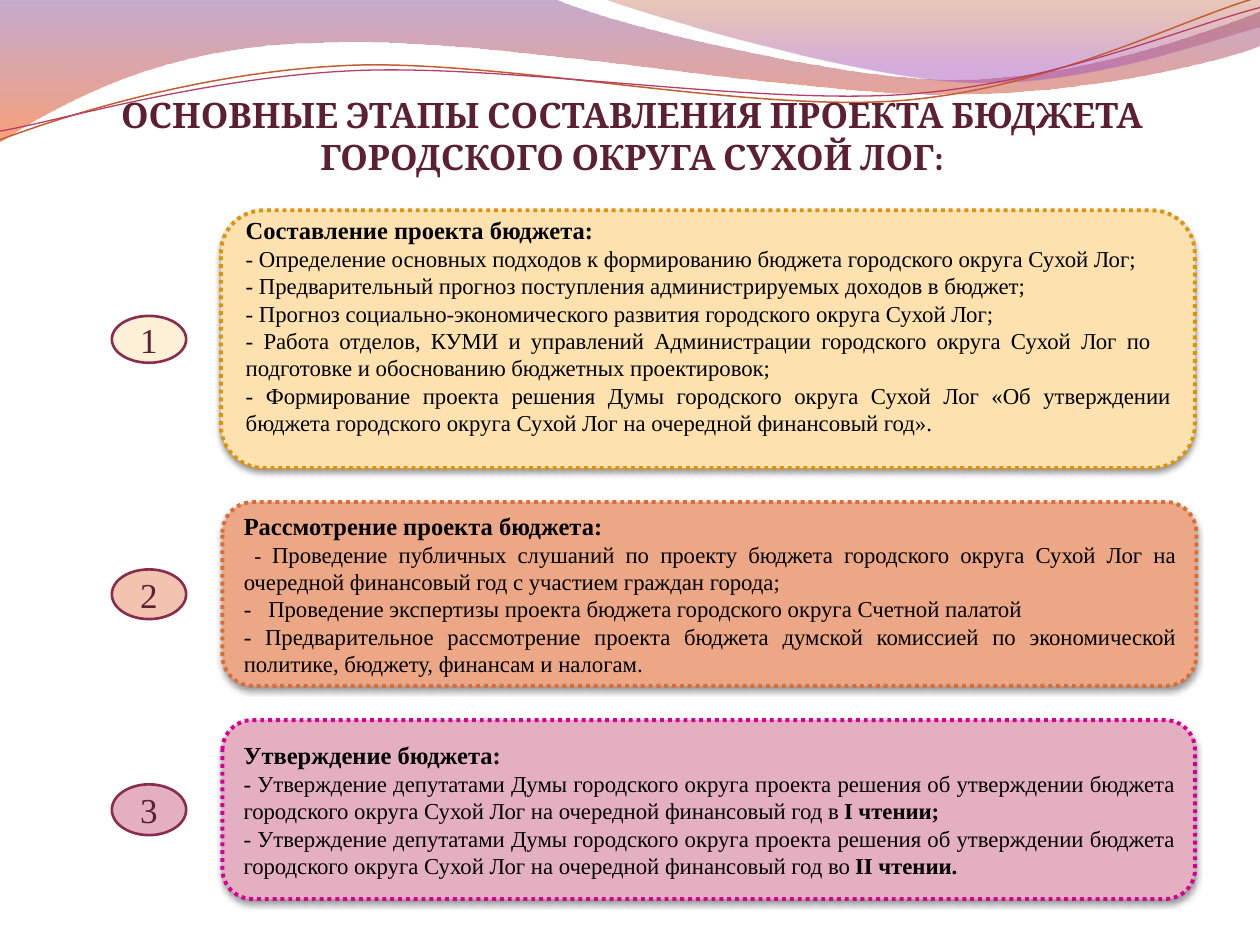
from dataclasses import dataclass

import pptx
import pptx.dml.color
import pptx.enum.dml
import pptx.enum.shapes
import pptx.enum.text
import pptx.oxml
import pptx.oxml.ns
import pptx.util
from lxml import etree

Pt = pptx.util.Pt
qn = pptx.oxml.ns.qn
Align = pptx.enum.text.PP_ALIGN
Anchor = pptx.enum.text.MSO_ANCHOR
Shape = pptx.enum.shapes.MSO_SHAPE
Point = tuple[float, float]

COLORS = {
    "text": "000000", "plum": "5C1F34", "oval_line": "882D4D",
    "violet": "834591", "orange": "F35307", "brown": "B74915", "lilac": "A14BB4",
    "rust_line": "C45F30", "rose_line": "B83D68",
    "sand": "FDE2B0", "sand_line": "DF9307", "sand_light": "FEF0D7",
    "coral": "EBA786", "coral_line": "DE6C36", "coral_light": "F2C4AF",
    "pink": "E5AFC2", "pink_line": "D60093",
}
BODY_FONT = "Times New Roman"
OVAL_LEFT, OVAL_WIDTH = 63.9, 42.5


@dataclass
class Stop:
    position: float
    color: str
    alpha: int


@dataclass
class Curve:
    """Steps of one point are straight lines, steps of three are Bézier curves."""
    start: Point
    steps: list[tuple[Point, ...]]
    stops: tuple[Stop, ...] = ()
    line: str = ""
    width: float = 0


@dataclass
class Item:
    text: str
    lead: str = ""
    bold_tail: str = ""
    left: float = 0
    right: float = 0
    indent: float = 0


@dataclass
class Stage:
    left: float
    top: float
    width: float
    height: float
    color: str
    oval_top: float
    oval_height: float
    oval_color: str
    heading: str
    items: list[Item]
    bottom_inset: float = 3.6


CURVES = [
    Curve((0, -0.7), [
        ((316.8, -0.7),),
        ((342.7, 12.2), (478.1, 45.4), (545.8, 45.4)),
        ((614.2, 45.4), (689.8, 18.7), (720, 6.5)),
        ((720.7, 25.9),),
        ((707.8, 31.7), (626.4, 54.7), (537.1, 54)),
        ((447.8, 54), (275, 20.2), (185, 24.5)),
        ((92.9, 25.2), (33.1, 59.8), (-0.7, 81.4)),
        ((0, -0.7),),
    ], stops=(Stop(0, "violet", 45), Stop(1, "orange", 55))),
    Curve((344.9, -0.7), [
        ((366.5, 7.9), (491, 44.6), (553.7, 46.8)),
        ((616.3, 49.7), (691.9, 23), (720, 15.1)),
        ((720, 0),),
        ((344.9, -0.7),),
    ], stops=(Stop(0, "brown", 30), Stop(0.8, "lilac", 45))),
    Curve((0, 79.9), [
        ((34.6, 67), (113.8, 41), (199.4, 37.4)),
        ((284.4, 33.8), (427, 64.1), (513.4, 57.6)),
        ((599.8, 51.1), (675.4, 10.8), (718.6, -1.4)),
    ], line="rust_line", width=0.85),
    Curve((0, 74.9), [
        ((33.8, 69.1), (118.1, 43.9), (203.8, 40.3)),
        ((290.2, 36.7), (429.8, 59.8), (516.2, 54)),
        ((601.9, 48.2), (677.5, 15.1), (720, 4.3)),
    ], line="rose_line", width=0.75),
]

APPROVAL = ("- Утверждение депутатами Думы городского округа проекта решения об утверждении "
            "бюджета городского округа Сухой Лог на очередной финансовый год ")
STAGES = [
    Stage(126.2, 120.2, 556.6, 147.3, "sand", 180.5, 26.8, "sand_light",
          "Составление проекта бюджета:", [
              Item("- Определение основных подходов к формированию бюджета городского округа Сухой Лог;"),
              Item("- Предварительный прогноз поступления администрируемых доходов в бюджет;"),
              Item("- Прогноз социально-экономического развития городского округа Сухой Лог;"),
              Item("- Работа отделов, КУМИ и управлений Администрации городского округа Сухой Лог по "
                   "подготовке и обоснованию бюджетных проектировок;", right=11.4),
              Item("- Формирование проекта решения Думы городского округа Сухой Лог «Об утверждении "
                   "бюджета городского округа Сухой Лог на очередной финансовый год»."),
          ], bottom_inset=19),
    Stage(127.1, 286.9, 556.6, 105.1, "coral", 325.4, 28.4, "coral_light",
          "Рассмотрение проекта бюджета:", [
              Item("Проведение публичных слушаний по проекту бюджета городского округа Сухой Лог на "
                   "очередной финансовый год с участием граждан города;", lead="- ", indent=6),
              Item("-\tПроведение экспертизы проекта бюджета городского округа Счетной палатой",
                   left=14, indent=-14),
              Item("- Предварительное рассмотрение проекта бюджета думской комиссией по экономической "
                   "политике, бюджету, финансам и налогам."),
          ]),
    Stage(127.1, 411.5, 555.8, 102.2, "pink", 448.2, 29, "pink",
          "Утверждение бюджета:", [
              Item(APPROVAL + "в ", bold_tail="I чтении;"),
              Item(APPROVAL + "во ", bold_tail="II чтении."),
          ]),
]


def rgb(name: str) -> pptx.dml.color.RGBColor:
    return pptx.dml.color.RGBColor.from_string(COLORS[name])


def add_run(p, text: str, size: float, color: str = "text", bold: bool = False,
            font: str = BODY_FONT) -> None:
    r = p.add_run()
    r.text = text
    r.font.name, r.font.size, r.font.bold = font, Pt(size), bold
    r.font.color.rgb = rgb(color)


def bezier_points(p0: Point, p1: Point, p2: Point, p3: Point, count: int = 40) -> list[Point]:
    params = [i / count for i in range(1, count + 1)]
    return [tuple((1 - t)**3 * a + 3 * (1 - t)**2 * t * b + 3 * (1 - t) * t * t * c + t**3 * d
                  for a, b, c, d in zip(p0, p1, p2, p3)) for t in params]


def set_curved_path(sp, curve: Curve) -> None:
    """Write the path of a freeform with true Bézier segments."""
    path = sp.element.spPr.find(".//" + qn("a:path"))
    for child in list(path):
        path.remove(child)
    for step in [(curve.start,), *curve.steps]:
        tag = "a:moveTo" if len(path) == 0 else "a:lnTo" if len(step) == 1 else "a:cubicBezTo"
        command = etree.SubElement(path, qn(tag))
        for x, y in step:
            etree.SubElement(command, qn("a:pt"), x=str(Pt(x) - sp.left), y=str(Pt(y) - sp.top))
    if curve.stops:
        etree.SubElement(path, qn("a:close"))


def draw_curve(s, curve: Curve) -> None:
    points = [curve.start]
    for step in curve.steps:
        points += bezier_points(points[-1], *step) if len(step) == 3 else step
    emu = [(Pt(x), Pt(y)) for x, y in points]
    builder = s.shapes.build_freeform(*emu[0])
    builder.add_line_segments(emu[1:], close=bool(curve.stops))
    sp = builder.convert_to_shape()
    set_curved_path(sp, curve)
    sp.shadow.inherit = False
    if curve.line:
        sp.fill.background()
        sp.line.color.rgb, sp.line.width = rgb(curve.line), Pt(curve.width)
        return
    sp.line.fill.background()
    sp.fill.gradient()
    sp.fill.gradient_angle = 270
    for gs, stop in zip(sp.fill.gradient_stops, curve.stops):
        gs.position, gs.color.rgb = stop.position, rgb(stop.color)
    for clr, stop in zip(sp.element.spPr.iterfind(".//" + qn("a:srgbClr")), curve.stops):
        etree.SubElement(clr, qn("a:alpha"), val=str(stop.alpha * 1000))


def add_filled(s, kind, box: tuple[float, ...], fill: str, line: str, width: float):
    sp = s.shapes.add_shape(kind, *map(Pt, box))
    sp.shadow.inherit = False
    sp.fill.solid()
    sp.fill.fore_color.rgb = rgb(fill)
    sp.line.color.rgb, sp.line.width = rgb(line), Pt(width)
    sp.text_frame.word_wrap = True
    sp.text_frame.vertical_anchor = Anchor.MIDDLE
    return sp


def add_drop_shadow(sp) -> None:
    sp.element.spPr.find(qn("a:effectLst")).append(pptx.oxml.parse_xml(
        f'<a:outerShdw {pptx.oxml.ns.nsdecls("a")} blurRad="{Pt(3)}" dist="{Pt(2)}" dir="5400000" '
        'rotWithShape="0"><a:srgbClr val="000000"><a:alpha val="40000"/></a:srgbClr></a:outerShdw>'))


def draw_stage(s, number: int, stage: Stage) -> None:
    sp = add_filled(s, Shape.ROUNDED_RECTANGLE, (stage.left, stage.top, stage.width, stage.height),
                    stage.color, stage.color + "_line", 2.25)
    sp.line.dash_style = pptx.enum.dml.MSO_LINE.ROUND_DOT
    add_drop_shadow(sp)
    tf = sp.text_frame
    tf.margin_bottom = Pt(stage.bottom_inset)
    tf.paragraphs[0].alignment = Align.JUSTIFY
    add_run(tf.paragraphs[0], stage.heading, 14, bold=True)
    for item in stage.items:
        p = tf.add_paragraph()
        p.alignment = Align.JUSTIFY
        for name, value in (("marL", item.left), ("marR", item.right), ("indent", item.indent)):
            p._p.get_or_add_pPr().set(name, str(Pt(value)))
        if item.lead:
            add_run(p, item.lead, 12)
        add_run(p, item.text, 13)
        if item.bold_tail:
            add_run(p, item.bold_tail, 13, bold=True)

    oval = add_filled(s, Shape.OVAL, (OVAL_LEFT, stage.oval_top, OVAL_WIDTH, stage.oval_height),
                      stage.oval_color, "oval_line", 1.5)
    p = oval.text_frame.paragraphs[0]
    p.alignment = Align.CENTER
    add_run(p, str(number), 20, "plum")


def draw_title(s, text: str) -> None:
    title = s.shapes.title
    title.left, title.top, title.width, title.height = map(Pt, (43.2, 49.7, 635.8, 55.4))
    tf = title.text_frame
    tf.word_wrap = True
    tf.auto_size = pptx.enum.text.MSO_AUTO_SIZE.NONE
    tf.vertical_anchor = Anchor.TOP
    tf.paragraphs[0].alignment = Align.CENTER
    add_run(tf.paragraphs[0], text, 20, "plum", bold=True, font="Cambria")
    title.element.getparent().append(title.element)  # in front of the waves


def main() -> None:
    prs = pptx.Presentation()
    prs.slide_width, prs.slide_height = Pt(720), Pt(540)
    s = prs.slides.add_slide(prs.slide_layouts[5])
    for curve in CURVES:
        draw_curve(s, curve)
    draw_title(s, "ОСНОВНЫЕ ЭТАПЫ СОСТАВЛЕНИЯ ПРОЕКТА БЮДЖЕТА ГОРОДСКОГО ОКРУГА СУХОЙ ЛОГ:")
    for number, stage in enumerate(STAGES, 1):
        draw_stage(s, number, stage)
    prs.save("out.pptx")


if __name__ == "__main__":
    main()
